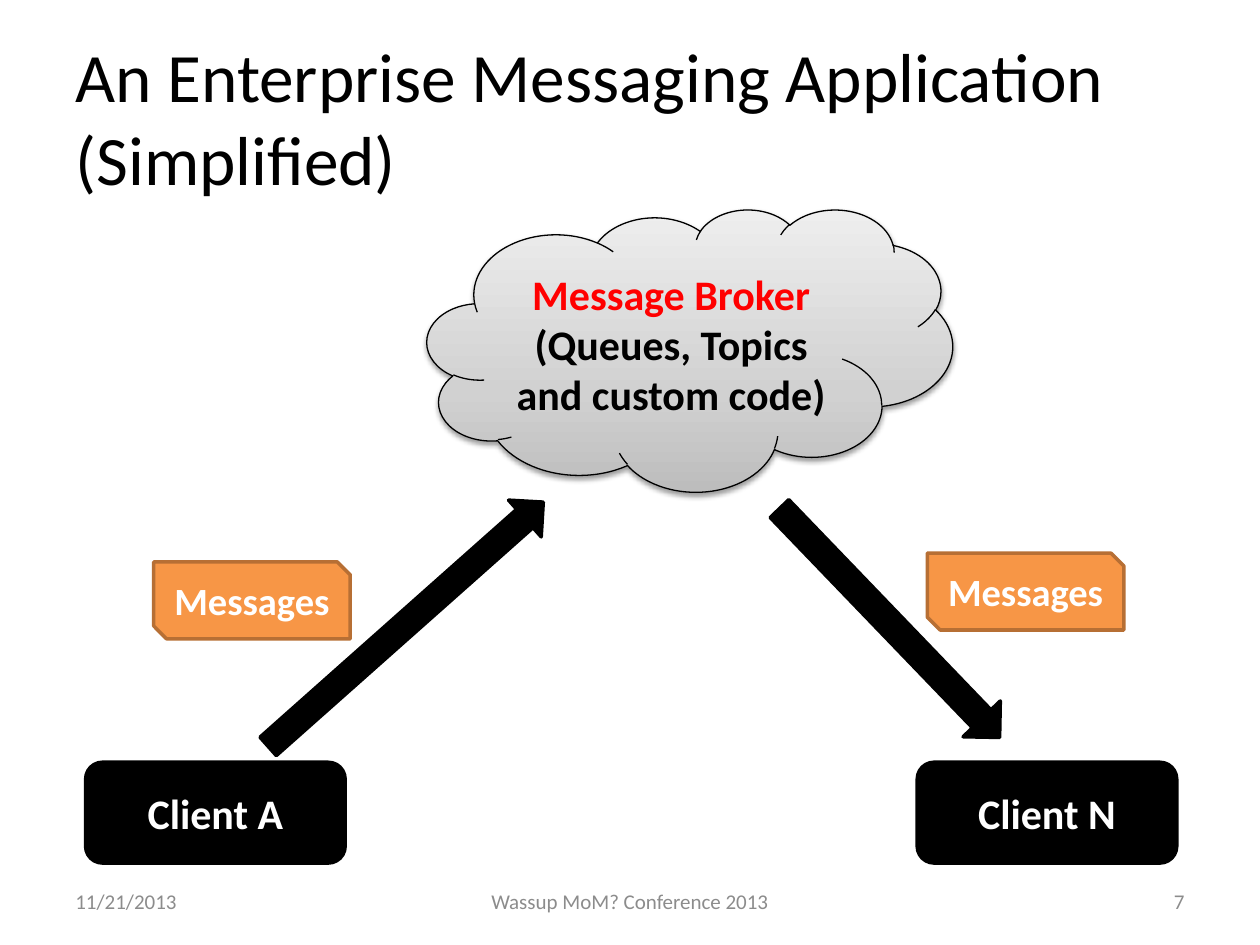
"""Builds the slide showing a simplified enterprise messaging application."""
from copy import deepcopy

from lxml import etree
from pptx import Presentation, util as u
from pptx.dml.color import RGBColor
from pptx.enum import shapes, text
from pptx.oxml.ns import qn

BLACK, WHITE = RGBColor(0, 0, 0), RGBColor(255, 255, 255)
RED, GREY = RGBColor(255, 0, 0), RGBColor(0x8C, 0x8C, 0x8C)
ORANGE, BROWN = RGBColor(0xF7, 0x96, 0x46), RGBColor(0xB7, 0x6F, 0x34)
CLOUD_STOPS = [(0, RGBColor(0xBD, 0xBD, 0xBD)), (0.35, RGBColor(0xD1, 0xD1, 0xD1)),
               (1, RGBColor(0xEE, 0xEE, 0xEE))]
KIND, ALIGN = shapes.MSO_SHAPE, text.PP_ALIGN

W, H, MARGIN = 10, 7.5, 0.5
TITLE = "An Enterprise Messaging Application (Simplified)"
BROKER = [("Message Broker ", RED), ("(Queues, Topics and custom code)", BLACK)]
CLIENTS = [("Client A", 0.68), ("Client N", 7.28)]
ARROWS = [((1.76, 4.76, 2.92, 0.39), 318.4), ((5.8, 4.74, 2.52, 0.41), 46.1)]
MESSAGES = [("Messages", 1.22, 4.46), ("Messages", 7.36, 4.39)]
FOOTERS = [("11/21/2013", MARGIN, 2.33, ALIGN.LEFT),
           ("Wassup MoM? Conference 2013", (W - 3.17) / 2, 3.17, ALIGN.CENTER),
           ("7", W - MARGIN - 2.33, 2.33, ALIGN.RIGHT)]


def write(sp, runs, size=24, bold=True, align=ALIGN.CENTER):
    """Fill a shape with one paragraph of (text, colour) runs."""
    tf = sp.text_frame
    tf.word_wrap, tf.vertical_anchor = True, text.MSO_ANCHOR.MIDDLE
    p = tf.paragraphs[0]
    p.alignment = align
    for words, colour in runs:
        r = p.add_run()
        r.text = words
        r.font.name, r.font.size, r.font.bold = "Calibri", u.Pt(size), bold
        r.font.color.rgb = colour


def add_box(s, box):
    return s.shapes.add_textbox(*map(u.Inches, box))


def add_shape(s, kind, box, fill=BLACK, line=BLACK, width=2):
    sp = s.shapes.add_shape(kind, *map(u.Inches, box))
    sp.shadow.inherit = False
    sp.fill.solid()
    sp.fill.fore_color.rgb = fill
    sp.line.color.rgb, sp.line.width = line, u.Pt(width)
    return sp


def shade_cloud(sp):
    """Give the cloud its three-stop gradient and soft shadow."""
    sp.fill.gradient()
    sp.fill.gradient_angle = 90
    stops = sp._element.spPr.find(qn("a:gradFill")).find(qn("a:gsLst"))
    stops.insert(1, deepcopy(stops[0]))
    for stop, (position, colour) in zip(sp.fill.gradient_stops, CLOUD_STOPS):
        stop.position, stop.color.rgb = position, colour
    effects = sp._element.spPr.find(qn("a:effectLst"))
    shadow = etree.SubElement(effects, qn("a:outerShdw"), blurRad=str(u.Pt(3.1)),
                              dist=str(u.Pt(1.6)), dir="5400000", rotWithShape="0")
    colour = etree.SubElement(shadow, qn("a:srgbClr"), val=str(BLACK))
    etree.SubElement(colour, qn("a:alpha"), val="38000")


def main():
    prs = Presentation()
    prs.slide_width, prs.slide_height = u.Inches(W), u.Inches(H)
    s = prs.slides.add_slide(prs.slide_layouts[6])

    write(add_box(s, (MARGIN, 0.3, W - 2 * MARGIN, 1.25)), [(TITLE, BLACK)],
          size=39.6, bold=False, align=ALIGN.LEFT)

    cloud = add_shape(s, KIND.CLOUD, (3.39, 1.66, 4.17, 2.24), width=0.75)
    shade_cloud(cloud)
    write(cloud, BROKER)

    for name, x in CLIENTS:
        write(add_shape(s, KIND.ROUNDED_RECTANGLE, (x, 6.05, 2.06, 0.8)), [(name, WHITE)])
    for box, angle in ARROWS:
        add_shape(s, KIND.RIGHT_ARROW, box).rotation = angle
    for label, x, y in MESSAGES:
        sp = add_shape(s, KIND.SNIP_2_DIAG_RECTANGLE, (x, y, 1.56, 0.61), ORANGE, BROWN)
        write(sp, [(label, WHITE)], size=22)
    for words, x, width, align in FOOTERS:
        write(add_box(s, (x, 6.95, width, 0.4)), [(words, GREY)],
              size=12, bold=False, align=align)

    prs.save("out.pptx")


if __name__ == "__main__":
    main()
